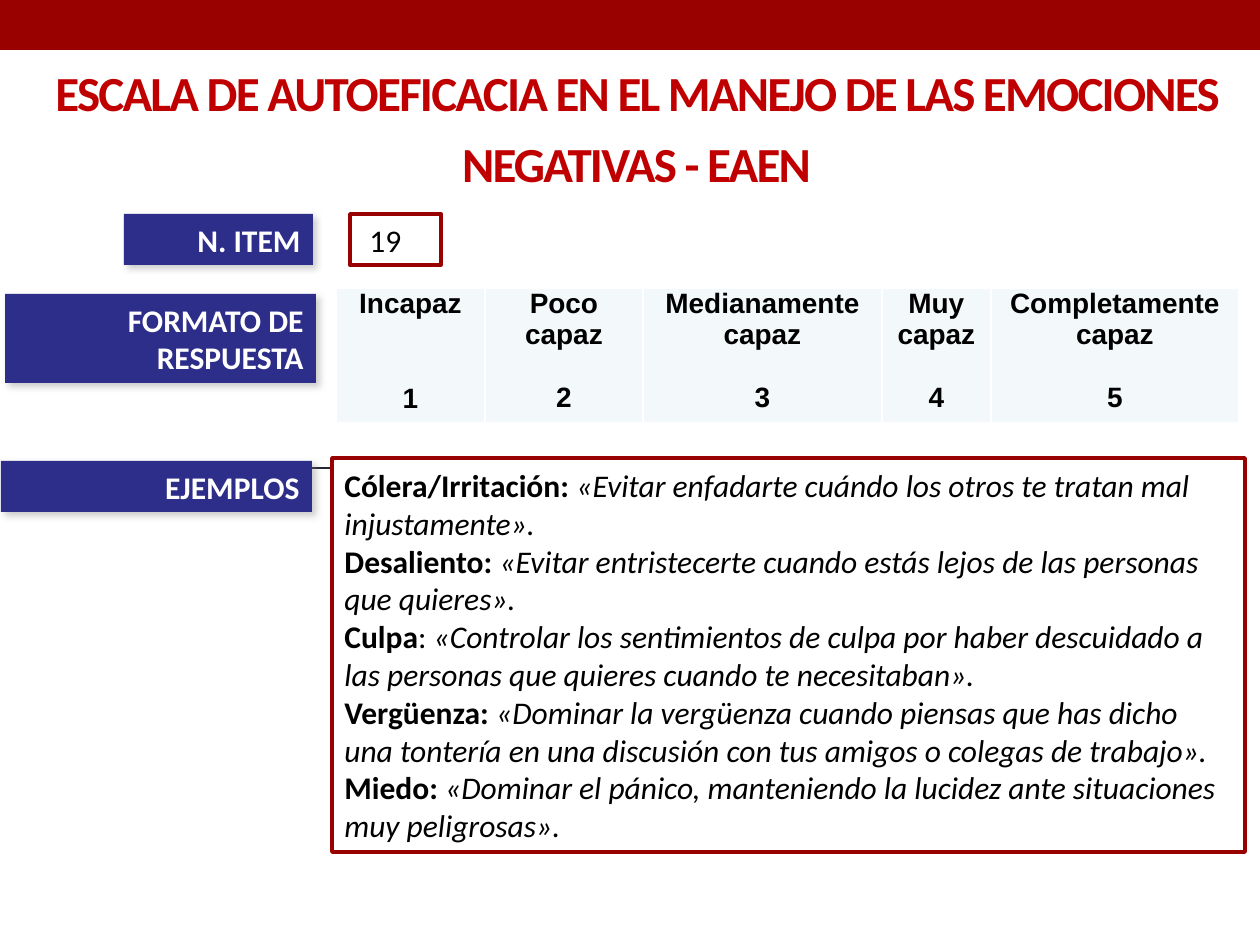
from lxml import etree
from pptx import Presentation
from pptx.dml.color import RGBColor
from pptx.enum.shapes import MSO_CONNECTOR, MSO_SHAPE
from pptx.enum.text import MSO_ANCHOR, MSO_AUTO_SIZE, PP_ALIGN
from pptx.oxml import parse_xml
from pptx.oxml.ns import nsdecls, qn
from pptx.util import Emu, Pt

PX = 914400 / 126
WHITE = RGBColor(0xFF, 0xFF, 0xFF)
BLACK = RGBColor(0, 0, 0)
DARK_RED = RGBColor(0x99, 0, 0)
TITLE_RED = RGBColor(0xC0, 0, 0)
BLUE = RGBColor(0x2D, 0x2D, 0x8A)
RULE_GRAY = RGBColor(0x25, 0x27, 0x31)
CELL_FILL = RGBColor(0xF3, 0xF9, 0xFA)

TITLE = "ESCALA DE AUTOEFICACIA EN EL MANEJO DE LAS EMOCIONES NEGATIVAS - EAEN"
LABELS = [
    ("N. ITEM", (124, 214, 189, 51)),
    ("FORMATO DE RESPUESTA", (5, 294, 311, 89)),
    ("EJEMPLOS", (1, 461, 311, 51)),
]
ITEM_COUNT = " 19"
# Answer, column width in px, number of text lines the answer takes
ANSWERS = [
    ("Incapaz", 149, 1),
    ("Poco capaz", 158, 2),
    ("Medianamente capaz", 239, 2),
    ("Muy capaz", 109, 2),
    ("Completamente capaz", 248, 2),
]
LINES_ABOVE_NUMBER = 3
ANSWER_LINE = 18.4
# Bold term, plain separator, italic example
EXAMPLES = [
    ("Cólera/Irritación: ", "", "«Evitar enfadarte cuándo los otros te tratan mal injustamente»."),
    ("Desaliento: ", "", "«Evitar entristecerte cuando estás lejos de las personas que quieres»."),
    ("Culpa", ": ", "«Controlar los sentimientos de culpa por haber descuidado a "
     "las personas que quieres cuando te necesitaban»."),
    ("Vergüenza: ", "", "«Dominar la vergüenza cuando piensas que has dicho una tontería "
     "en una discusión con tus amigos o colegas de trabajo»."),
    ("Miedo: ", "", "«Dominar el pánico, manteniendo la lucidez ante situaciones muy peligrosas»."),
]


def px(*lengths):
    return [Emu(round(length * PX)) for length in lengths]


def add_text(paragraph, text, *, size=18, font="Calibri", color=BLACK,
             bold=False, italic=False, align=None):
    run = paragraph.add_run()
    run.text = text
    run.font.size = Pt(size)
    run.font.name = font
    run.font.color.rgb = color
    run.font.bold = bold
    run.font.italic = italic
    if align is not None:
        paragraph.alignment = align
    return run


def add_box(slide, box, fill, line=None):
    shape = slide.shapes.add_shape(MSO_SHAPE.RECTANGLE, *px(*box))
    shape.shadow.inherit = False
    shape.fill.solid()
    shape.fill.fore_color.rgb = fill
    if line is None:
        shape.line.fill.background()
    else:
        shape.line.color.rgb = line
        shape.line.width = Pt(2.08)
    shape.text_frame.word_wrap = True
    shape.text_frame.paragraphs[0].alignment = PP_ALIGN.LEFT
    return shape


def add_shadow(shape):
    effects = shape._element.spPr.find(qn("a:effectLst"))
    effects.append(parse_xml(
        f'<a:outerShdw {nsdecls("a")} blurRad="{Pt(4)}" dist="{Pt(3)}" dir="2700000" '
        'algn="tl" rotWithShape="0"><a:srgbClr val="808080"><a:alpha val="40000"/>'
        '</a:srgbClr></a:outerShdw>'))


def add_rule(slide):
    rule = slide.shapes.add_connector(MSO_CONNECTOR.STRAIGHT, *px(95, 468, 1176, 468))
    rule.line.color.rgb = RULE_GRAY
    rule.line.width = Pt(1.5)
    etree.SubElement(rule._element.spPr, qn("a:effectLst"))


def format_cell(cell):
    properties = cell._tc.get_or_add_tcPr()
    for side in ("lnL", "lnR", "lnT", "lnB"):
        properties.append(parse_xml(
            f'<a:{side} {nsdecls("a")} w="{Pt(1)}"><a:solidFill>'
            f'<a:srgbClr val="{WHITE}"/></a:solidFill></a:{side}>'))
    cell.fill.solid()
    cell.fill.fore_color.rgb = CELL_FILL
    cell.margin_left, cell.margin_right = px(6, 6)
    cell.margin_top = cell.margin_bottom = 0


def add_answers(slide):
    width = sum(column_width for _, column_width, _ in ANSWERS)
    table = slide.shapes.add_table(1, len(ANSWERS), *px(336, 288, width, 135)).table
    style = {"size": 16, "font": "Arial", "bold": True, "align": PP_ALIGN.CENTER}
    for index, (answer, column_width, lines) in enumerate(ANSWERS):
        table.columns[index].width = px(column_width)[0]
        cell = table.cell(0, index)
        format_cell(cell)
        add_text(cell.text_frame.paragraphs[0], answer, **style)
        number = cell.text_frame.add_paragraph()
        number.space_before = Pt((LINES_ABOVE_NUMBER - lines) * ANSWER_LINE)
        add_text(number, str(index + 1), **style)


def add_examples(slide):
    frame = add_box(slide, (332, 458, 913, 394), WHITE, DARK_RED).text_frame
    for index, (term, separator, example) in enumerate(EXAMPLES):
        paragraph = frame.add_paragraph() if index else frame.paragraphs[0]
        add_text(paragraph, term, bold=True, align=PP_ALIGN.LEFT)
        if separator:
            add_text(paragraph, separator)
        add_text(paragraph, example, italic=True)


def format_title(title):
    title.left, title.top, title.width, title.height = px(14, 26, 1245, 227)
    frame = title.text_frame
    frame.word_wrap = True
    frame.auto_size = MSO_AUTO_SIZE.NONE
    frame.vertical_anchor = MSO_ANCHOR.BOTTOM
    frame.margin_bottom = px(61)[0]
    paragraph = frame.paragraphs[0]
    paragraph.line_spacing = 1.2
    run = add_text(paragraph, TITLE, size=28, color=TITLE_RED, bold=True,
                   align=PP_ALIGN.CENTER)
    run.font._element.set("spc", "-100")


def main():
    presentation = Presentation()
    presentation.slide_width, presentation.slide_height = px(1260, 945)
    slide = presentation.slides.add_slide(presentation.slide_layouts[5])
    format_title(slide.shapes.title)
    add_box(slide, (0, 0, 1260, 50), DARK_RED)
    add_rule(slide)
    add_answers(slide)
    for text, box in LABELS:
        label = add_box(slide, box, BLUE)
        add_shadow(label)
        add_text(label.text_frame.paragraphs[0], text, color=WHITE, bold=True,
                 align=PP_ALIGN.RIGHT)
    count = add_box(slide, (350, 214, 91, 51), WHITE, DARK_RED)
    add_text(count.text_frame.paragraphs[0], ITEM_COUNT)
    add_examples(slide)
    presentation.save("out.pptx")


if __name__ == "__main__":
    main()
